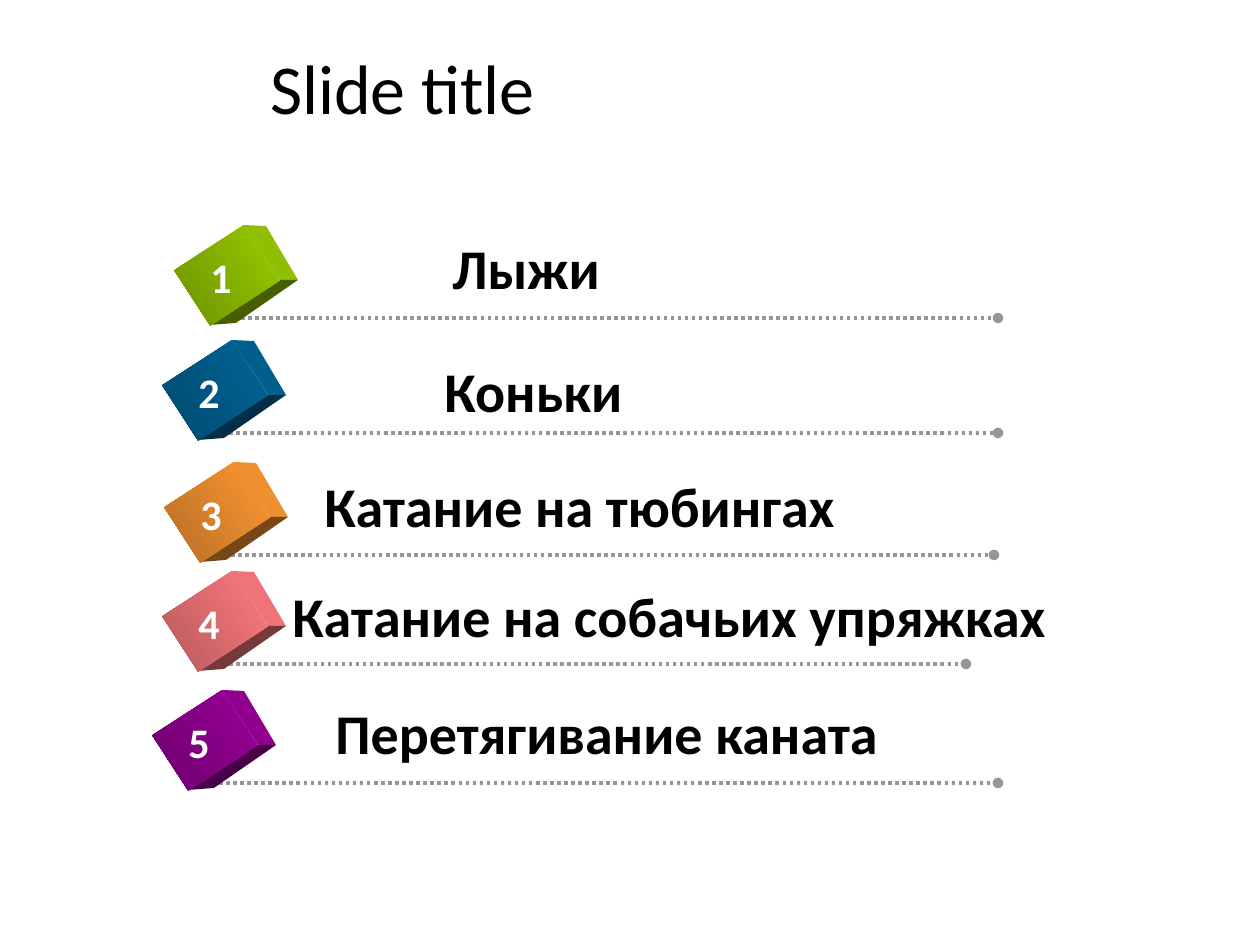
from lxml import etree
from pptx import Presentation
from pptx.dml.color import RGBColor
from pptx.enum.dml import MSO_LINE
from pptx.enum.shapes import MSO_CONNECTOR, MSO_SHAPE
from pptx.enum.text import MSO_ANCHOR, PP_ALIGN
from pptx.oxml.ns import qn
from pptx.util import Pt

PX = 7257  # EMU per px, 126 px to the inch
STRAIGHT, RECT = MSO_CONNECTOR.STRAIGHT, MSO_SHAPE.RECTANGLE
DOTTED, LEFT, MIDDLE = MSO_LINE.ROUND_DOT, PP_ALIGN.LEFT, MSO_ANCHOR.MIDDLE

# Side faces of a cube, relative to the centre of its front face
RIGHT_FACE = [(17, -50), (39, -49), (71, 5), (53, 5)]
BOTTOM_FACE = [(53, 5), (71, 5), (9, 48), (-17, 50)]


def rgb(color):
    return RGBColor.from_string(color)


def shade(color, factor):
    return "".join(f"{int(int(color[i:i + 2], 16) * factor):02X}" for i in (0, 2, 4))


def set_text(tf, text, size=32, color="000000", bold=False, spacing=None):
    p = tf.paragraphs[0]
    p.alignment = LEFT
    if spacing:
        p.line_spacing = spacing
    r = p.add_run()
    r.text = text
    r.font.name, r.font.size, r.font.bold = "Calibri", Pt(size), bold
    r.font.color.rgb = rgb(color)


class Deck:
    def __init__(self, prs):
        self.s = prs.slides.add_slide(prs.slide_layouts[5])

    def title(self, text, x, y, w, h, indent):
        sp = self.s.shapes.title
        sp.left, sp.top, sp.width, sp.height = (v * PX for v in (x, y, w, h))
        tf = sp.text_frame
        tf.vertical_anchor = MIDDLE
        tf.margin_left = indent * PX
        set_text(tf, text, size=40, spacing=0.9)

    def text(self, text, x, y, w, h, **fmt):
        tf = self.s.shapes.add_textbox(x * PX, y * PX, w * PX, h * PX).text_frame
        tf.word_wrap = True
        set_text(tf, text, bold=True, **fmt)

    def dotted_line(self, x1, x2, y):
        c = self.s.shapes.add_connector(STRAIGHT, x1 * PX, y * PX, x2 * PX, y * PX)
        c.line.color.rgb = rgb("969696")
        c.line.width = Pt(2)
        c.line.dash_style = DOTTED
        ln = c.line._get_or_add_ln()
        etree.SubElement(ln, qn("a:tailEnd"), type="oval")
        etree.SubElement(c._element.spPr, qn("a:effectLst"))

    def face(self, cx, cy, points, color):
        pts = [((cx + dx) * PX, (cy + dy) * PX) for dx, dy in points]
        fb = self.s.shapes.build_freeform(*pts[0])
        fb.add_line_segments(pts[1:], close=True)
        sp = fb.convert_to_shape()
        sp.shadow.inherit = False
        sp.fill.solid()
        sp.fill.fore_color.rgb = rgb(color)
        sp.line.fill.background()

    def cube(self, cx, cy, light, dark, w=66, h=83):
        self.face(cx, cy, RIGHT_FACE, shade(light, 0.94))
        self.face(cx, cy, BOTTOM_FACE, shade(light, 0.47))
        sp = self.s.shapes.add_shape(RECT, (cx - w // 2) * PX, (cy - h // 2) * PX, w * PX, h * PX)
        sp.rotation = 57
        sp.shadow.inherit = False
        sp.line.fill.background()
        sp.fill.gradient()
        sp.fill.gradient_angle = 270
        for stop, color, pos in zip(sp.fill.gradient_stops, (light, dark), (0, 1)):
            stop.color.rgb = rgb(color)
            stop.position = pos


# Cube centre, line end, text left, top and width, gradient colours, wording
ROWS = [
    (227, 275, 998, 440, 227, 266, "99CC00", "6D9200", "Лыжи"),
    (215, 390, 998, 432, 350, 241, "006699", "00496D", "Коньки"),
    (217, 512, 994, 312, 465, 630, "FF9933", "B66D24", "Катание на тюбингах"),
    (215, 621, 966, 280, 575, 883, "FF7C80", "B6595C", "Катание на собачьих упряжках"),
    (205, 740, 998, 323, 692, 573, "990099", "6D006D", "Перетягивание каната"),
]


def main():
    prs = Presentation()
    prs.slide_width, prs.slide_height = 1260 * PX, 945 * PX
    deck = Deck(prs)
    deck.title("Slide title", 87, 23, 1086, 137, indent=183)

    # Numbered rows
    for n, (cx, cy, end, x, y, w, light, dark, label) in enumerate(ROWS, 1):
        deck.dotted_line(cx + 7, end, cy + 43)
        deck.cube(cx, cy, light, dark)
        deck.text(label, x, y, w, 81)
        deck.text(str(n), cx - 29, cy - 30, 56, 63, size=24, color="FFFFFF")

    prs.save("out.pptx")


if __name__ == "__main__":
    main()
